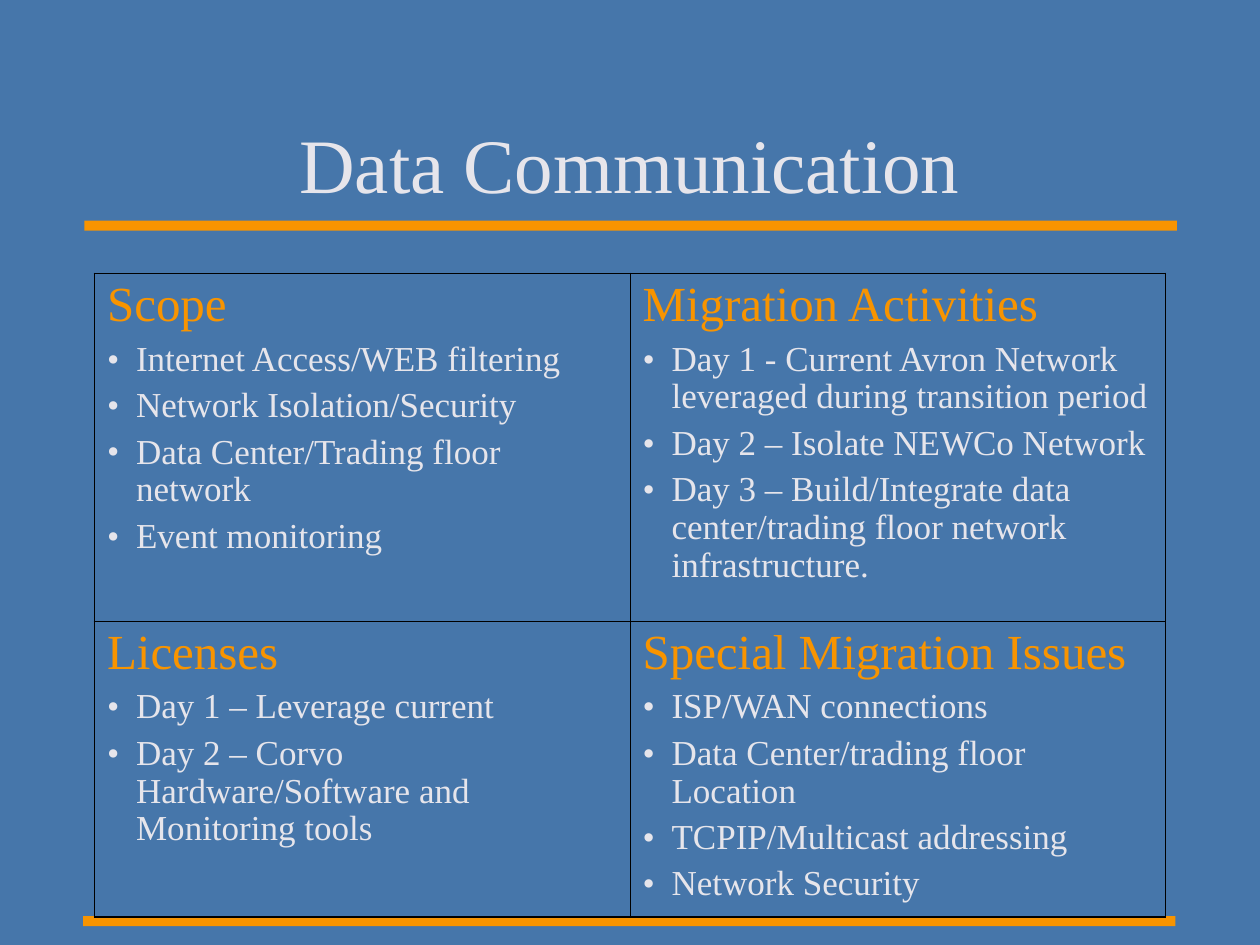
from lxml import etree
from pptx import Presentation
from pptx.dml.color import RGBColor
from pptx.enum.shapes import MSO_SHAPE
from pptx.enum.text import MSO_ANCHOR, PP_ALIGN
from pptx.oxml.ns import qn
from pptx.util import Inches, Pt

RECT = MSO_SHAPE.RECTANGLE
MIDDLE = MSO_ANCHOR.MIDDLE
CENTER = PP_ALIGN.CENTER

BLUE = RGBColor(0x46, 0x76, 0xAA)
ORANGE = RGBColor(0xF8, 0x94, 0x00)
PALE = RGBColor(0xE6, 0xE5, 0xEB)
BLACK = RGBColor(0, 0, 0)
FONT = "Times New Roman"
THICK, THIN = 1.08, 0.45

TOPICS = [
    [
        ("Scope", ["Internet Access/WEB filtering", "Network Isolation/Security",
                   "Data Center/Trading floor network", "Event monitoring"]),
        ("Migration Activities", [
            "Day 1 - Current Avron Network leveraged during transition period",
            "Day 2 – Isolate NEWCo Network",
            "Day 3 – Build/Integrate data center/trading floor network infrastructure."]),
    ],
    [
        ("Licenses", ["Day 1 – Leverage current",
                      "Day 2 – Corvo Hardware/Software and Monitoring tools"]),
        ("Special Migration Issues", [
            "ISP/WAN connections", "Data Center/trading floor Location",
            "TCPIP/Multicast addressing", "Network Security"]),
    ],
]


def set_font(para, size, color):
    font = para.font
    font.name = FONT
    font.size = Pt(size)
    font.color.rgb = color


def add_color(parent, color):
    etree.SubElement(parent, qn("a:srgbClr"), val=str(color))


def add_title(slide, text):
    title = slide.shapes.title
    title.left, title.top = Inches(0.75), Inches(0.67)
    title.width, title.height = Inches(8.5), Inches(1.25)
    frame = title.text_frame
    frame.text = text
    frame.vertical_anchor = MIDDLE
    para = frame.paragraphs[0]
    para.alignment = CENTER
    set_font(para, 44, PALE)


def add_bar(slide, left, top):
    bar = slide.shapes.add_shape(RECT, Inches(left), Inches(top), Inches(8.67), Inches(0.08))
    bar.shadow.inherit = False
    bar.fill.solid()
    bar.fill.fore_color.rgb = ORANGE
    bar.line.fill.background()


def add_bullet(para):
    props = para._p.get_or_add_pPr()
    indent = Inches(0.23)
    props.set("marL", str(indent))
    props.set("indent", str(-indent))
    add_color(etree.SubElement(props, qn("a:buClr")), PALE)
    etree.SubElement(props, qn("a:buFont"), typeface=FONT)
    etree.SubElement(props, qn("a:buChar"), char="•")


def set_borders(cell, row, col):
    """Draw thick lines on the outer edge of the 2 by 2 table, thin ones inside."""
    outer = {"L": col == 0, "R": col == 1, "T": row == 0, "B": row == 1}
    props = cell._tc.get_or_add_tcPr()
    for side, thick in outer.items():
        width = Pt(THICK if thick else THIN)
        line = etree.SubElement(props, qn(f"a:ln{side}"), w=str(width))
        add_color(etree.SubElement(line, qn("a:solidFill")), BLACK)


def fill_cell(cell, head, items):
    frame = cell.text_frame
    frame.text = "\n".join([head, *items])
    for i, para in enumerate(frame.paragraphs):
        para.line_spacing = 0.97
        para.space_before = Pt(5 if i else 7)
        if i:
            add_bullet(para)
            set_font(para, 20, PALE)
        else:
            set_font(para, 28, ORANGE)


def add_topics(slide):
    table = slide.shapes.add_table(
        2, 2, Inches(0.75), Inches(2.17), Inches(8.5), Inches(5.11)).table
    table.first_row = table.horz_banding = False
    for row, height in zip(table.rows, (2.76, 2.35)):
        row.height = Inches(height)
    for r, topics in enumerate(TOPICS):
        for c, (head, items) in enumerate(topics):
            cell = table.cell(r, c)
            set_borders(cell, r, c)
            cell.fill.background()
            fill_cell(cell, head, items)


def main():
    deck = Presentation()
    deck.slide_width, deck.slide_height = Inches(10), Inches(7.5)
    slide = deck.slides.add_slide(deck.slide_layouts[5])
    back = slide.background.fill
    back.solid()
    back.fore_color.rgb = BLUE
    add_title(slide, "Data Communication")
    add_bar(slide, 0.67, 1.75)
    add_bar(slide, 0.66, 7.27)
    add_topics(slide)
    deck.save("out.pptx")


if __name__ == "__main__":
    main()
